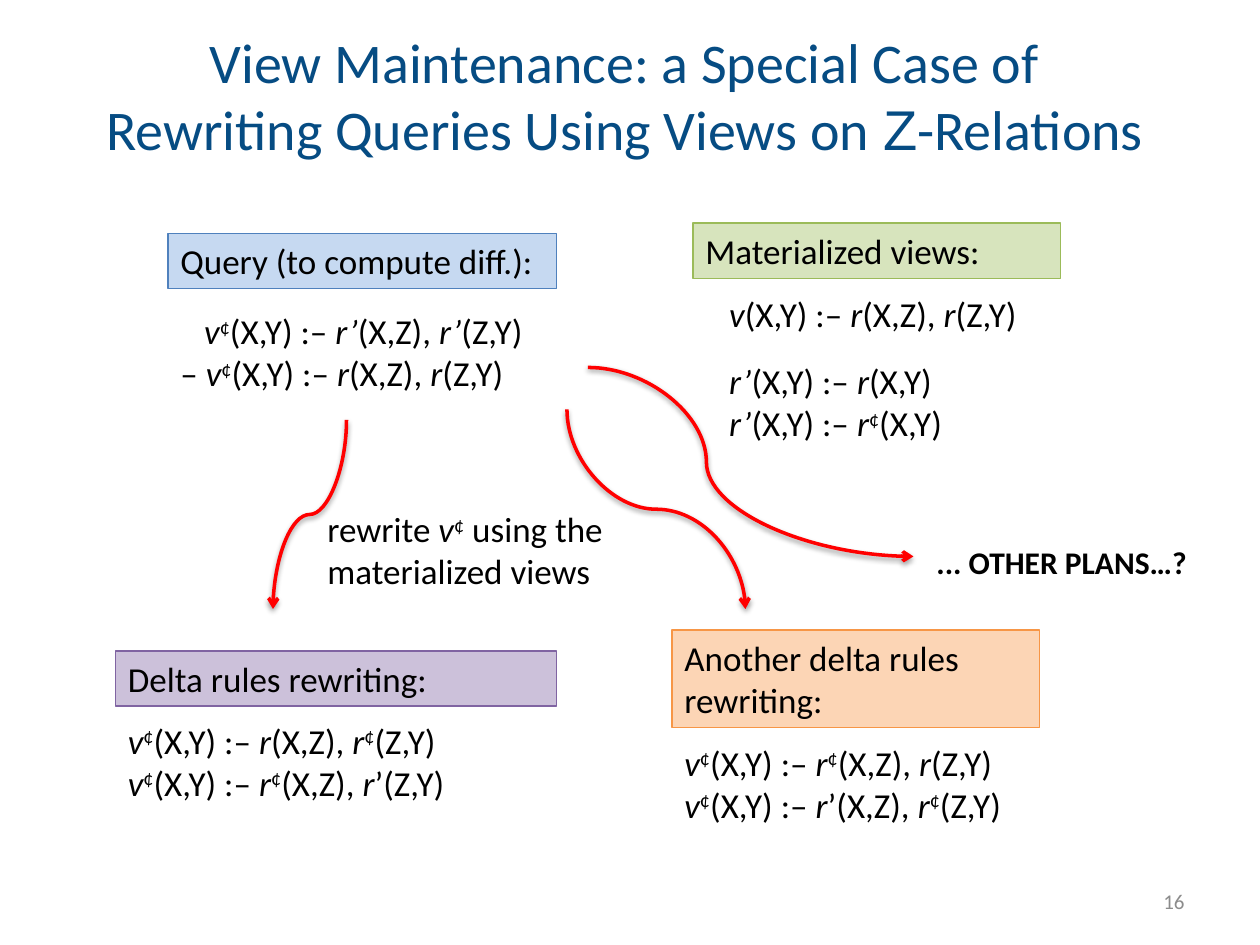
"""Build the slide on view maintenance as rewriting queries using views."""
from itertools import groupby

from lxml.etree import fromstring
from pptx import Presentation
from pptx.dml.color import RGBColor
from pptx.enum.shapes import MSO_CONNECTOR, MSO_SHAPE
from pptx.enum.text import MSO_ANCHOR, MSO_AUTO_SIZE, PP_ALIGN
from pptx.oxml.ns import qn
from pptx.util import Pt

BLACK = RGBColor(0x00, 0x00, 0x00)
NAVY = RGBColor(0x06, 0x4C, 0x83)
GRAY = RGBColor(0x8C, 0x8C, 0x8C)
RED = RGBColor(0xFF, 0x00, 0x00)
BLUE_FILL, BLUE_LINE = RGBColor(0xC6, 0xD9, 0xF1), RGBColor(0x4F, 0x81, 0xBD)
GREEN_FILL, GREEN_LINE = RGBColor(0xD7, 0xE4, 0xBD), RGBColor(0x9B, 0xBB, 0x59)
PURPLE_FILL, PURPLE_LINE = RGBColor(0xCC, 0xC1, 0xDA), RGBColor(0x80, 0x64, 0xA2)
ORANGE_FILL, ORANGE_LINE = RGBColor(0xFC, 0xD5, 0xB5), RGBColor(0xF7, 0x96, 0x46)

BODY = {"size": Pt(20), "name": "Calibri"}
TITLE = {"size": Pt(32), "name": "Calibri"}
PLANS = {"size": Pt(18), "name": "Calibri", "bold": True}
NUMBER = {"size": Pt(12), "name": "Calibri"}
RULE_INDENT = 13.6
RULE_GAP = 14.6

TITLE_LINES = ["View Maintenance: a Special Case of", "Rewriting Queries Using Views on ", "Z", "-Relations"]

HEADINGS = [
    (["Query (to compute diff.):"], (96, 133.5, 222, 31.5), BLUE_FILL, BLUE_LINE),
    (["Materialized views:"], (396, 127.5, 210, 31.5), GREEN_FILL, GREEN_LINE),
    (["Delta rules rewriting:"], (66, 372, 252, 31.5), PURPLE_FILL, PURPLE_LINE),
    (["Another delta rules", "rewriting:"], (384, 360, 210, 55.7), ORANGE_FILL, ORANGE_LINE),
]

RULES = [
    (["*v*¢(X,Y) :– *r*(X,Z), *r*¢(Z,Y)", "*v*¢(X,Y) :– *r*¢(X,Z), *r*’(Z,Y)"],
     (66, 407.5, 252, 55.7), []),
    (["*v*¢(X,Y) :– *r*¢(X,Z), *r*(Z,Y)", "*v*¢(X,Y) :– *r*’(X,Z), *r*¢(Z,Y)"],
     (384, 420, 252, 55.7), []),
    (["*v*¢(X,Y) :– *r’*(X,Z), *r’*(Z,Y)", "– *v*¢(X,Y) :– *r*(X,Z), *r*(Z,Y)"],
     (96, 173.5, 252, 55.7), [0]),
    (["*v*(X,Y) :– *r*(X,Z), *r*(Z,Y)", "*r’*(X,Y) :– *r*(X,Y)", "*r’*(X,Y) :– *r*¢(X,Y)"],
     (396, 163.5, 228, 94.5), [0, 1, 2]),
    (["rewrite *v*¢ using the materialized views"], (180, 286.5, 180, 55.7), []),
]

ARROWS = [
    ((198, 240), (156, 348), True, 0.5),
    ((324, 234), (426, 348), True, 0.5),
    ((336, 210), (522, 318), False, 0.364),
]

SHADOW = (
    '<a:effectLst xmlns:a="http://schemas.openxmlformats.org/drawingml/2006/main">'
    '<a:outerShdw blurRad="40000" dist="20000" dir="5400000" rotWithShape="0">'
    '<a:srgbClr val="000000"><a:alpha val="38000"/></a:srgbClr>'
    "</a:outerShdw></a:effectLst>"
)


def add_run(paragraph, text, formats, color=BLACK):
    run = paragraph.add_run()
    run.text = text
    for name, value in formats.items():
        setattr(run.font, name, value)
    run.font.color.rgb = color
    return run


def write_marked(paragraph, text, formats):
    for index, part in enumerate(text.split("*")):
        for raised, letters in groupby(part, key=lambda letter: letter == "¢"):
            run = add_run(paragraph, "".join(letters), {**formats, "italic": index % 2 == 1})
            if raised:
                run.font._element.set("baseline", "30000")


def write_lines(frame, lines, formats):
    frame.word_wrap = True
    frame.auto_size = MSO_AUTO_SIZE.SHAPE_TO_FIT_TEXT
    frame.vertical_anchor = MSO_ANCHOR.TOP
    for index, line in enumerate(lines):
        paragraph = frame.add_paragraph() if index else frame.paragraphs[0]
        paragraph.alignment = PP_ALIGN.LEFT
        write_marked(paragraph, line, formats)


def add_label(slide, place, alignment):
    frame = slide.shapes.add_textbox(*map(Pt, place)).text_frame
    frame.word_wrap = True
    frame.vertical_anchor = MSO_ANCHOR.MIDDLE
    frame.paragraphs[0].alignment = alignment
    return frame.paragraphs[0]


def add_arrow(slide, start, end, vertical, bend):
    (x1, y1), (x2, y2) = start, end
    rightward = x2 > x1
    if vertical:
        center_x, center_y = (x1 + x2) / 2, (y1 + y2) / 2
        half_run = (y2 - y1) / 2 * (-1 if rightward else 1)
        half_rise = abs(x2 - x1) / 2
        x1, x2 = center_x - half_run, center_x + half_run
        y1, y2 = center_y - half_rise, center_y + half_rise
    arrow = slide.shapes.add_connector(MSO_CONNECTOR.CURVE, *map(Pt, (x1, y1, x2, y2)))
    arrow.line.color.rgb = RED
    arrow.line.width = Pt(2)
    properties = arrow.element.spPr
    if vertical:
        properties.find(qn("a:xfrm")).set("rot", str((270 if rightward else 90) * 60000))
    guides = properties.find(qn("a:prstGeom")).get_or_add_avLst()
    guide = guides.makeelement(qn("a:gd"), {"name": "adj1", "fmla": f"val {round(bend * 100000)}"})
    guides.append(guide)
    outline = arrow.line._get_or_add_ln()
    outline.append(outline.makeelement(qn("a:tailEnd"), {"type": "arrow"}))
    properties.append(fromstring(SHADOW))


def main():
    deck = Presentation()
    deck.slide_width, deck.slide_height = Pt(720), Pt(540)
    slide = deck.slides.add_slide(deck.slide_layouts[6])

    title = add_label(slide, (30, 30, 654, 48), PP_ALIGN.CENTER)
    for index, text in enumerate(TITLE_LINES):
        if index == 1:
            title.add_line_break()
        add_run(title, text, {**TITLE, "name": "Arial" if text == "Z" else "Calibri"}, NAVY)

    number = add_label(slide, (516, 500.5, 168, 28.75), PP_ALIGN.RIGHT)
    add_run(number, "16", NUMBER, GRAY)

    for lines, place, indented in RULES:
        frame = slide.shapes.add_textbox(*map(Pt, place)).text_frame
        write_lines(frame, lines, BODY)
        for index in indented:
            frame.paragraphs[index]._p.get_or_add_pPr().set("marL", str(Pt(RULE_INDENT)))
        if len(lines) == 3:
            frame.paragraphs[1].space_before = Pt(RULE_GAP)

    for lines, place, fill, line in HEADINGS:
        heading = slide.shapes.add_shape(MSO_SHAPE.RECTANGLE, *map(Pt, place))
        heading.shadow.inherit = False
        heading.fill.solid()
        heading.fill.fore_color.rgb = fill
        heading.line.color.rgb = line
        heading.line.width = Pt(0.75)
        write_lines(heading.text_frame, lines, BODY)

    for arrow in ARROWS:
        add_arrow(slide, *arrow)

    plans = slide.shapes.add_textbox(*map(Pt, (528, 306.5, 168, 29)))
    write_lines(plans.text_frame, ["... OTHER PLANS…?"], PLANS)
    deck.save("out.pptx")


if __name__ == "__main__":
    main()
